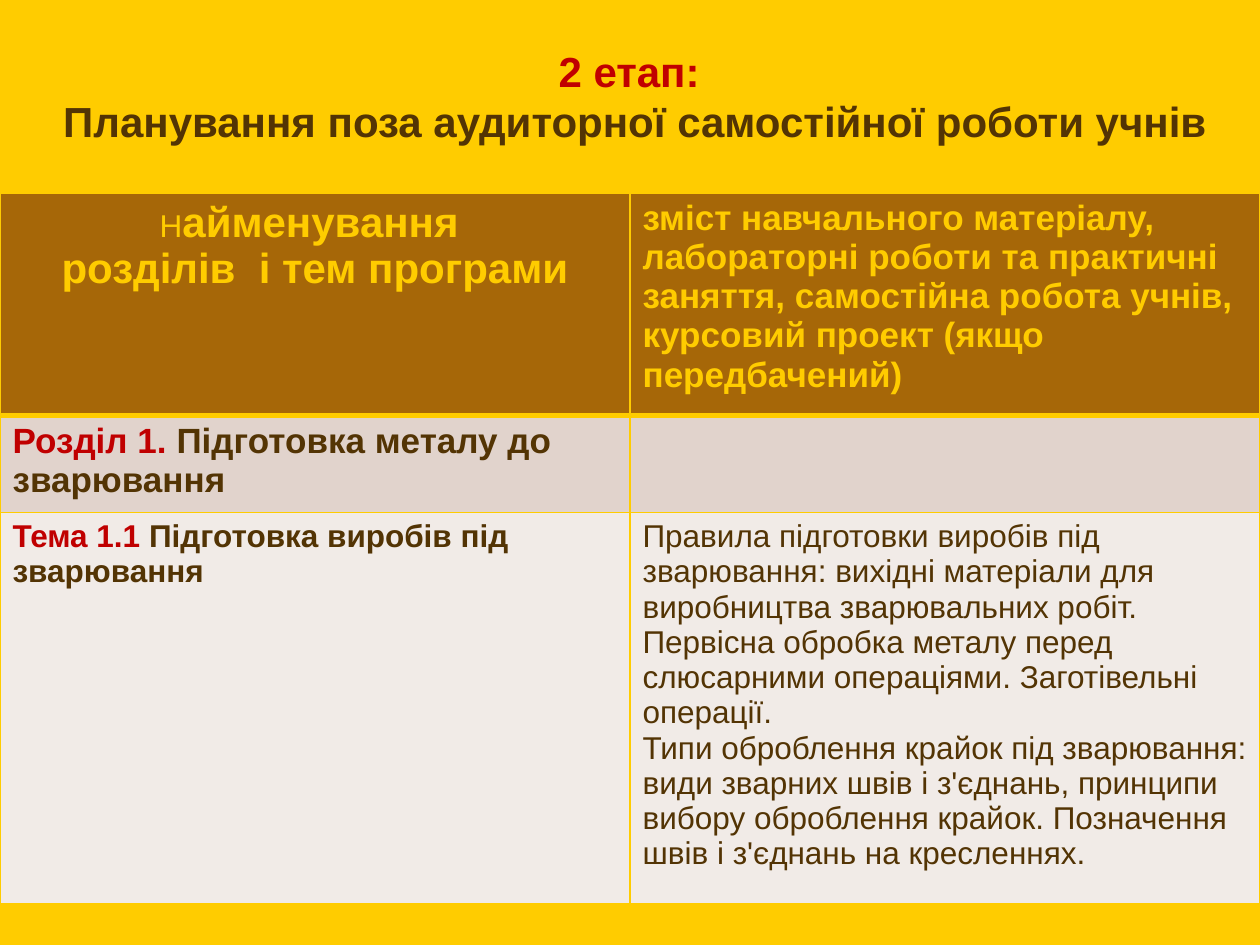
from lxml.etree import SubElement
from pptx import Presentation
from pptx.dml.color import RGBColor
from pptx.enum.text import MSO_AUTO_SIZE, PP_ALIGN
from pptx.oxml.ns import qn
from pptx.util import Pt

GOLD, RED, DARK = "FFCC00", "C00000", "533404"
HEAD, BAND, PALE = "A66708", "E1D3CC", "F1EBE7"


def color(code):
    return RGBColor.from_string(code)


def write(frame, paras, align=PP_ALIGN.LEFT):
    frame.text = "\n".join("".join(part[0] for part in runs) for runs in paras)
    for para, runs in zip(frame.paragraphs, paras):
        para.alignment = align
        para.text = ""if len(runs) > 1 else runs[0][0]
        para.clear()
        for words, size, code, bold in runs:
            run = para.add_run()
            run.text = words
            font = run.font
            font.name, font.size, font.bold = "Arial", Pt(size), bold
            font.color.rgb = color(code)


def border(cell, top, bottom):
    props = cell._tc.get_or_add_tcPr()
    for side, width in (("L", 1), ("R", 1), ("T", top), ("B", bottom)):
        line = SubElement(props, qn("a:ln" + side), w=str(Pt(width)))
        fill = SubElement(line, qn("a:solidFill"))
        SubElement(fill, qn("a:srgbClr"), val=GOLD)


def title(slide, paras):
    box = slide.shapes.add_textbox(Pt(16.5), Pt(22.3), Pt(686), Pt(65.5))
    frame = box.text_frame
    frame.word_wrap = True
    frame.auto_size = MSO_AUTO_SIZE.SHAPE_TO_FIT_TEXT
    write(frame, paras, PP_ALIGN.CENTER)


def grid(slide, rows):
    high = sum(row[0] for row in rows)
    table = slide.shapes.add_table(
        len(rows), 2, Pt(0), Pt(110.2), Pt(720), Pt(high)).table
    for i, (tall, back, cells) in enumerate(rows):
        table.rows[i].height = Pt(tall)
        for j, paras in enumerate(cells):
            cell = table.cell(i, j)
            border(cell, 3 if i == 1 else 1, 3 if i == 0 else 1)
            cell.fill.solid()
            cell.fill.fore_color.rgb = color(back)
            mid = i == 0 and j == 0
            if paras:
                write(cell.text_frame, paras,
                      PP_ALIGN.CENTER if mid else PP_ALIGN.LEFT)


def main():
    deck = Presentation()
    deck.slide_width, deck.slide_height = Pt(720), Pt(540)
    slide = deck.slides.add_slide(deck.slide_layouts[6])
    slide.background.fill.solid()
    slide.background.fill.fore_color.rgb = color(GOLD)
    title(slide, [
        [("2 етап:", 24, RED, True)],
        [(" Планування поза аудиторної самостійної роботи учнів",
          24, DARK, True)],
    ])
    names = [
        [("Н", 18, GOLD, False), ("айменування ", 24, GOLD, True)],
        [("розділів  і тем програми", 24, GOLD, True)],
    ]
    scope = [[("зміст навчального матеріалу, лабораторні роботи та практичні "
               "заняття, самостійна робота учнів, курсовий проект "
               "(якщо передбачений)", 20, GOLD, True)]]
    part = [[("Розділ 1. ", 20, RED, True),
             ("Підготовка металу до зварювання", 20, DARK, True)]]
    theme = [[("Тема 1.1 ", 18, RED, True),
              ("Підготовка виробів під зварювання", 18, DARK, True)]]
    rules = [
        [("Правила підготовки виробів під зварювання: вихідні матеріали для "
          "виробництва зварювальних робіт. Первісна обробка металу перед "
          "слюсарними операціями. Заготівельні операції.",
          18, DARK, False)],
        [("Типи оброблення крайок під зварювання: види зварних швів і "
          "з'єднань, принципи вибору оброблення крайок. Позначення швів і "
          "з'єднань на кресленнях.", 18, DARK, False)],
    ]
    grid(slide, [
        (126.5, HEAD, (names, scope)),
        (55.5, BAND, (part, None)),
        (223.5, PALE, (theme, rules)),
    ])
    deck.save("out.pptx")


if __name__ == "__main__":
    main()
